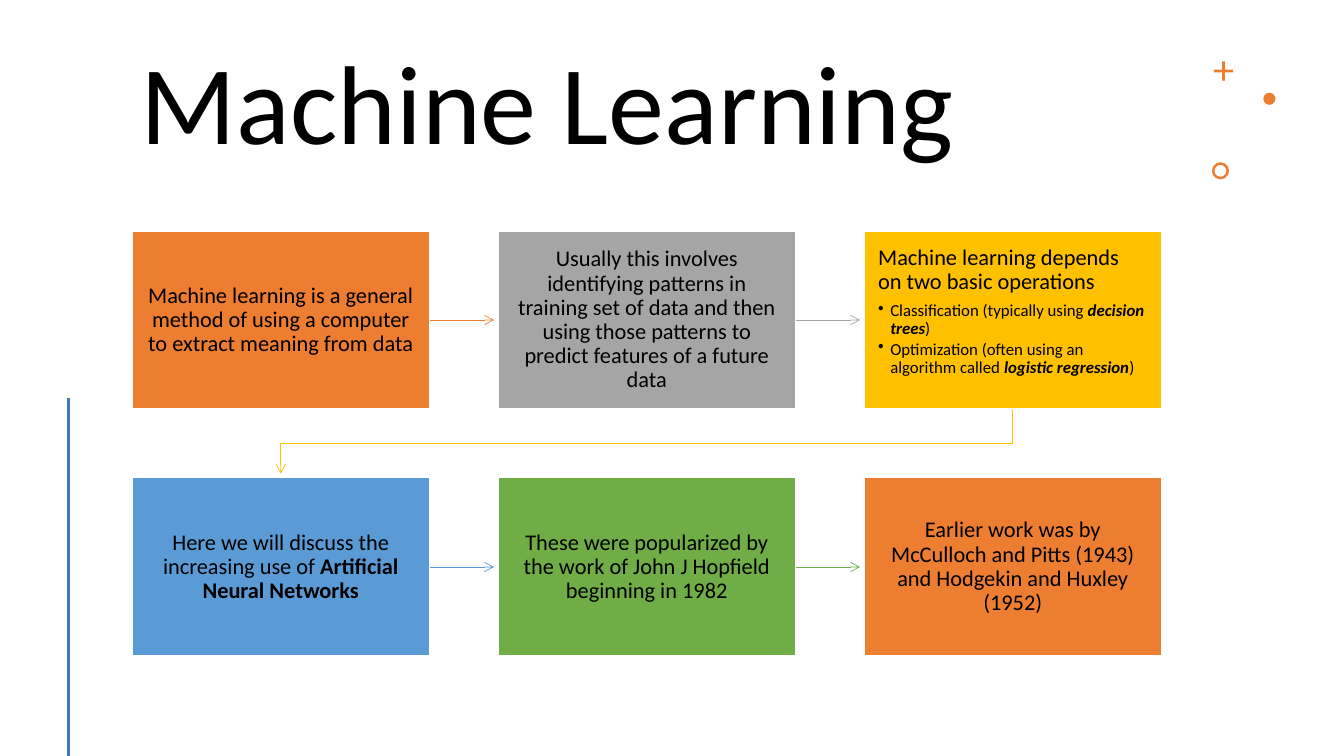
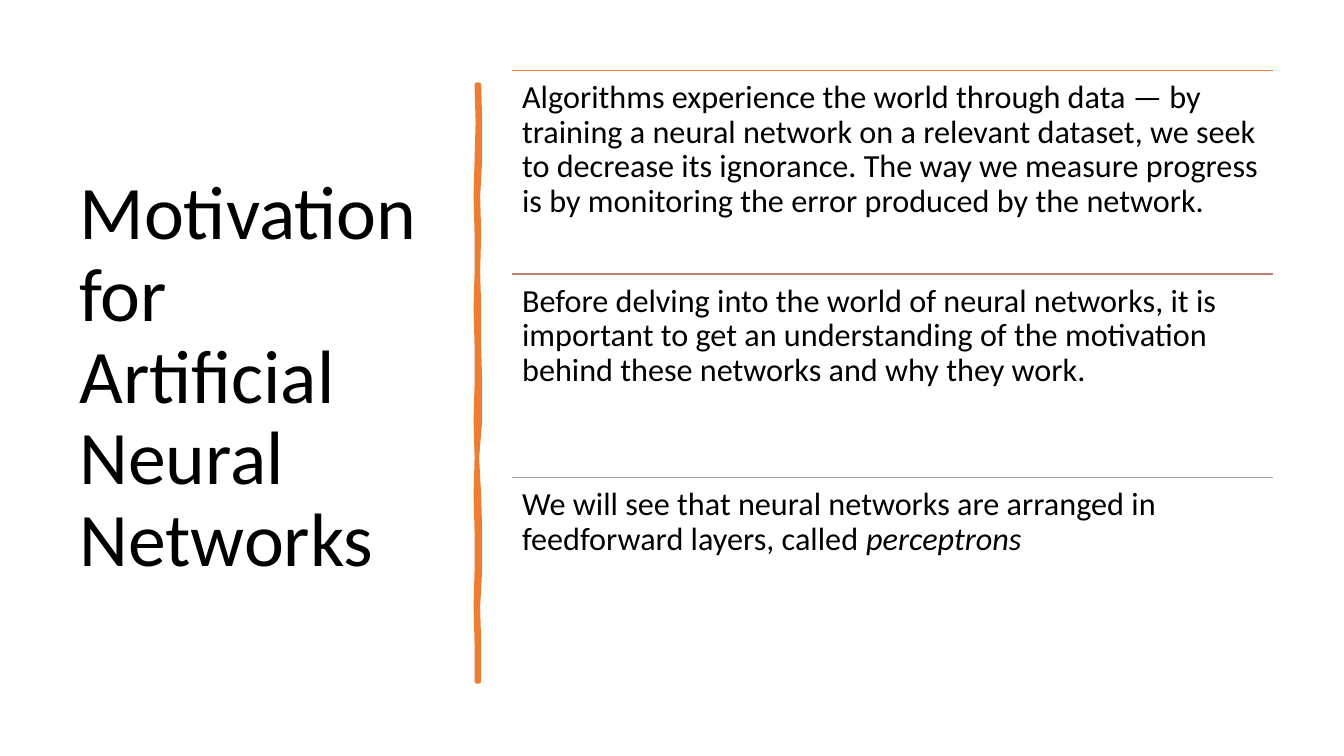
from dataclasses import dataclass

from lxml.etree import SubElement
from pptx import Presentation
from pptx.dml.color import RGBColor
from pptx.enum.shapes import MSO_CONNECTOR, MSO_SHAPE
from pptx.enum.text import MSO_ANCHOR, PP_ALIGN
from pptx.oxml.ns import qn
from pptx.util import Inches, Pt


@dataclass(frozen=True)
class Theme:
    """Colours, font and type sizes shared by the slides."""
    font: str = "Calibri"
    text: str = "000000"
    white: str = "FFFFFF"
    orange: str = "ED7D31"
    gray: str = "A5A5A5"
    gold: str = "FFC000"
    sky: str = "5B9BD5"
    green: str = "70AD47"
    navy: str = "4472C4"
    clay: str = "C48170"
    spacing: float = 0.9
    title: int = 80
    side_title: int = 54
    body: int = 23
    card: int = 16
    bullet: int = 12


T = Theme()


def rgb(color):
    """Turn a hex string into a colour."""
    return RGBColor.from_string(color)


def set_line(sp, color, width, arrow=False):
    """Style an outline, with an arrowhead at its end if asked."""
    sp.line.color.rgb = rgb(color)
    sp.line.width = Pt(width)
    if arrow:
        ln = sp.line._get_or_add_ln()
        SubElement(ln, qn("a:tailEnd")).set("type", "arrow")


def add_line(slide, x1, y1, x2, y2, color, width, arrow=False):
    """Draw a straight line without a shadow."""
    cn = slide.shapes.add_connector(
        MSO_CONNECTOR.STRAIGHT, Inches(x1), Inches(y1), Inches(x2), Inches(y2))
    set_line(cn, color, width, arrow)
    SubElement(cn._element.spPr, qn("a:effectLst"))


def add_outline(slide, points, close):
    """Build a shadowless outline through points given in inches."""
    pts = [(Inches(x), Inches(y)) for x, y in points]
    builder = slide.shapes.build_freeform(*pts[0])
    builder.add_line_segments(pts[1:], close=close)
    sp = builder.convert_to_shape()
    sp.shadow.inherit = False
    return sp


def add_shape(slide, kind, box, color):
    """Add a flat filled preset shape."""
    sp = slide.shapes.add_shape(kind, *map(Inches, box))
    sp.shadow.inherit = False
    sp.fill.solid()
    sp.fill.fore_color.rgb = rgb(color)
    sp.line.fill.background()
    return sp


def set_frame(tf, insets, anchor=MSO_ANCHOR.TOP):
    """Set wrapping, margins and anchor of a text frame."""
    tf.word_wrap = True
    tf.vertical_anchor = anchor
    tf.margin_left, tf.margin_top, tf.margin_right, tf.margin_bottom = map(Inches, insets)


def add_runs(p, runs, size, align=PP_ALIGN.LEFT):
    """Fill a paragraph with (text, style) runs; b is bold, i is italic."""
    p.alignment = align
    p.line_spacing = T.spacing
    for text, style in runs:
        r = p.add_run()
        r.text = text
        r.font.name = T.font
        r.font.size = Pt(size)
        r.font.color.rgb = rgb(T.text)
        r.font.bold = "b" in style
        r.font.italic = "i" in style


def add_text(slide, box, runs, size, insets, anchor=MSO_ANCHOR.TOP):
    """Add a text box of one paragraph."""
    tf = slide.shapes.add_textbox(*map(Inches, box)).text_frame
    set_frame(tf, insets, anchor)
    add_runs(tf.paragraphs[0], runs, size)


def add_bullet(tf, runs):
    """Append a bulleted paragraph."""
    p = tf.add_paragraph()
    pPr = p._p.get_or_add_pPr()
    pPr.set("marL", str(Inches(0.12)))
    pPr.set("indent", str(-Inches(0.12)))
    SubElement(pPr, qn("a:buChar")).set("char", "•")
    p.space_after = Pt(0.15 * T.bullet)
    add_runs(p, runs, T.bullet)


def add_card(slide, box, color, runs, bullets=()):
    """Draw one step; a step with bullets is set from the top left."""
    sp = add_shape(slide, MSO_SHAPE.RECTANGLE, box, color)
    set_line(sp, T.white, 1)
    tf = sp.text_frame
    set_frame(tf, (0.14, 0.15, 0.14, 0.15),
              MSO_ANCHOR.TOP if bullets else MSO_ANCHOR.MIDDLE)
    p = tf.paragraphs[0]
    add_runs(p, runs, T.card, PP_ALIGN.LEFT if bullets else PP_ALIGN.CENTER)
    if bullets:
        p.space_after = Pt(0.35 * T.card)
    for bullet in bullets:
        add_bullet(tf, bullet)


def add_flow(slide, left, top, cards, cols=3):
    """Lay the cards out in rows and join each to the next by an arrow."""
    w, h, dx, dy, reach = 2.95, 1.77, 3.63, 2.45, 0.64
    for i, (color, runs, bullets) in enumerate(cards):
        row, col = divmod(i, cols)
        x, y = left + col * dx, top + row * dy
        if col < cols - 1:
            add_line(slide, x + w, y + h / 2, x + w + reach, y + h / 2, color, 0.5, True)
        elif i < len(cards) - 1:
            x1, x2, y1 = x + w / 2, left + w / 2, y + h
            elbow = add_outline(slide, [(x1, y1), (x1, y + (h + dy) / 2),
                                        (x2, y + (h + dy) / 2), (x2, y1 + reach)], False)
            elbow.fill.background()
            set_line(elbow, color, 0.5, True)
        add_card(slide, (x, y, w, h), color, runs, bullets)


def add_ornaments(slide, left, top):
    """Draw the plus, dot and ring."""
    plus = add_shape(slide, MSO_SHAPE.CROSS, (left + 0.02, top, 0.19, 0.19), T.orange)
    plus.adjustments[0] = 0.43
    add_shape(slide, MSO_SHAPE.OVAL, (left + 0.51, top + 0.31, 0.12, 0.12), T.orange)
    ring = add_shape(slide, MSO_SHAPE.DONUT, (left, top + 1, 0.17, 0.17), T.orange)
    ring.adjustments[0] = 0.15


def add_brush_rule(slide, x, top, height):
    """Draw an uneven vertical brush stroke."""
    right = (1, 2, 2, 0, 1, 0, 1, 1, 2, 2, -1, 1, 2, 2, 0, 1, 1)
    left = (0, 1, 0, -1, 0, 0, -1, 0, 0, -1, 0, -1, 0, 0, -1, 0, 0)
    step = height / (len(right) - 1)
    points = [(x + 0.01 * d, top + i * step) for i, d in enumerate(right)]
    points += [(x - 0.01 + 0.01 * d, top + i * step)
               for i, d in reversed(list(enumerate(left)))]
    sp = add_outline(slide, points, True)
    sp.fill.solid()
    sp.fill.fore_color.rgb = rgb(T.orange)
    set_line(sp, T.orange, 3.25)


def add_ruled_list(slide, left, top, width, items):
    """Stack texts, each under a coloured rule."""
    h = 2.02
    for i, (color, runs) in enumerate(items):
        y = top + i * h
        add_line(slide, left, y, left + width, y, color, 1)
        add_text(slide, (left, y, width, h), runs, T.body, (0.1,) * 4)


def build_learning(slide):
    """Build the slide with the flow of cards."""
    add_text(slide, (1.3, 0.42, 10.23, 1.31), [("Machine Learning", "")],
             T.title, (0.1, 0.05, 0.1, 0.05))
    add_ornaments(slide, 12.02, 0.61)
    add_line(slide, 0.68, 3.95, 0.68, 7.5, T.navy, 2)
    add_flow(slide, 1.31, 2.29, [
        (T.orange, [("Machine learning is a general method of using a computer to "
                     "extract meaning from data", "")], ()),
        (T.gray, [("Usually this involves identifying patterns in training set of data "
                   "and then using those patterns to predict features of a future data", "")], ()),
        (T.gold, [("Machine learning depends on two basic operations", "")], (
            [("Classification (typically using ", ""), ("decision trees", "bi"), (")", "")],
            [("Optimization (often using an algorithm called ", ""),
             ("logistic regression", "bi"), (")", "")])),
        (T.sky, [("Here we will discuss the increasing use of ", ""),
                 ("Artificial Neural Networks", "b")], ()),
        (T.green, [("These were popularized by the work of John J Hopfield "
                    "beginning in 1982", "")], ()),
        (T.orange, [("Earlier work was by McCulloch and Pitts (1943) and Hodgekin "
                     "and Huxley (1952)", "")], ()),
    ])


def build_motivation(slide):
    """Build the slide with a side title and a ruled list."""
    add_text(slide, (0.69, 0.7, 3.74, 6.11),
             [("Motivation for Artificial Neural Networks", "")],
             T.side_title, (0.1, 0.05, 0.15, 0.05), MSO_ANCHOR.MIDDLE)
    add_brush_rule(slide, 4.74, 0.84, 5.92)
    add_ruled_list(slide, 5.08, 0.7, 7.55, [
        (T.orange, [("Algorithms experience the world through data — by training a neural "
                     "network on a relevant dataset, we seek to decrease its ignorance. "
                     "The way we measure progress is by monitoring the error produced by "
                     "the network.", "")]),
        (T.clay, [("Before delving into the world of neural networks, it is important to "
                   "get an understanding of the motivation behind these networks and why "
                   "they work.", "")]),
        (T.gray, [("We will see that neural networks are arranged in feedforward layers, "
                   "called ", ""), ("perceptrons", "i")]),
    ])


def main():
    """Build and save the presentation."""
    prs = Presentation()
    prs.slide_width, prs.slide_height = Inches(13.33), Inches(7.5)
    for build in (build_learning, build_motivation):
        build(prs.slides.add_slide(prs.slide_layouts[6]))
    prs.save("out.pptx")


if __name__ == "__main__":
    main()
